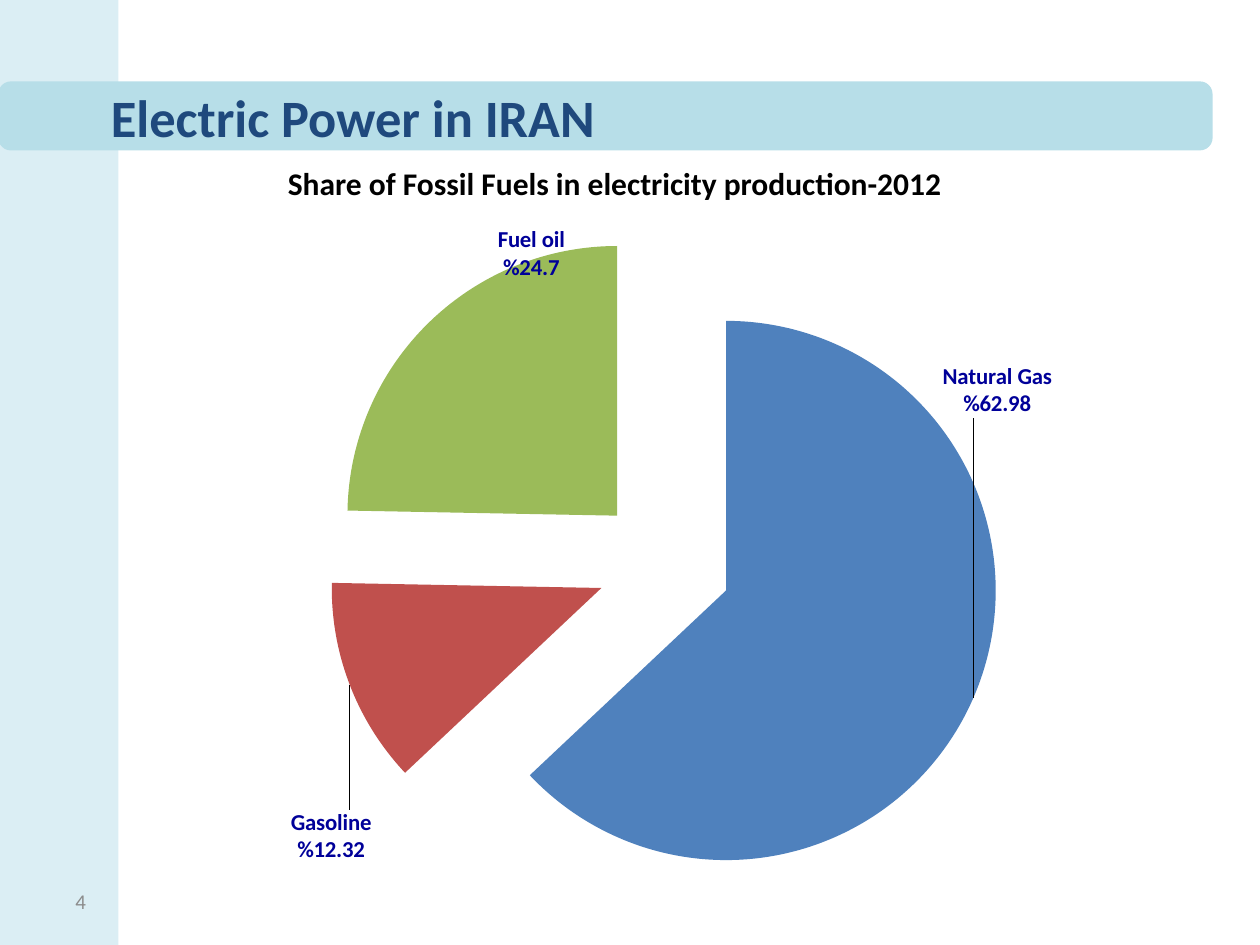
from lxml import etree
from pptx import Presentation
from pptx.chart.data import CategoryChartData
from pptx.dml.color import RGBColor
from pptx.enum.chart import XL_CHART_TYPE, XL_LABEL_POSITION
from pptx.enum.shapes import MSO_SHAPE
from pptx.enum.text import MSO_ANCHOR, PP_ALIGN
from pptx.oxml.ns import qn
from pptx.util import Inches, Pt

PIE = XL_CHART_TYPE.PIE
OUTSIDE = XL_LABEL_POSITION.OUTSIDE_END
LEFT, CENTER = PP_ALIGN.LEFT, PP_ALIGN.CENTER
MIDDLE, TOP = MSO_ANCHOR.MIDDLE, MSO_ANCHOR.TOP

PALE = RGBColor(0xDB, 0xEE, 0xF4)
AQUA = RGBColor(0xB7, 0xDE, 0xE8)
NAVY = RGBColor(0x1F, 0x49, 0x7D)
BLACK = RGBColor(0, 0, 0)
GREY = RGBColor(0x8C, 0x8C, 0x8C)
LABEL_BLUE = RGBColor(0, 0, 0x99)
BLUE = RGBColor(0x4F, 0x81, 0xBD)
RED = RGBColor(0xC0, 0x50, 0x4D)
GREEN = RGBColor(0x9B, 0xBB, 0x59)

FONT = "Calibri"
TITLE = "Electric Power in IRAN"
SUBTITLE = "Share of Fossil Fuels in electricity production-2012"
PAGE_NUMBER = "4"
FUELS = [
    ("Natural Gas", 62.98, BLUE, ["Natural Gas %62.98"], (-0.04, -0.5)),
    ("Gasoline", 12.32, RED, ["Gasoline %12.32"], (0.03, 0.18)),
    ("Oil", 24.7, GREEN, ["Fuel oil", "%24.7"], (0.15, -0.07)),
]
EXPLOSION = 25


def set_font(font, size, color, bold=False):
    font.name = FONT
    font.size = Pt(size)
    font.bold = bold
    font.color.rgb = color


def add_panel(page, shape_type, area, color):
    panel = page.shapes.add_shape(shape_type, *map(Inches, area))
    panel.shadow.inherit = False
    panel.fill.solid()
    panel.fill.fore_color.rgb = color
    panel.line.fill.background()
    return panel


def write(box, text, size, color, bold, align, anchor):
    frame = box.text_frame
    frame.word_wrap = True
    frame.vertical_anchor = anchor
    para = frame.paragraphs[0]
    para.alignment = align
    span = para.add_run()
    span.text = text
    set_font(span.font, size, color, bold)


def manual_layout(**values):
    layout = etree.Element(qn("c:layout"))
    manual = etree.SubElement(layout, qn("c:manualLayout"))
    for name, value in values.items():
        etree.SubElement(manual, qn("c:" + name)).set("val", str(value))
    return layout


def add_pie(page, area):
    data = CategoryChartData()
    data.categories = [fuel[0] for fuel in FUELS]
    data.add_series("Series 1", [fuel[1] for fuel in FUELS])
    chart = page.shapes.add_chart(PIE, *map(Inches, area), data).chart
    chart.has_legend = False
    chart.has_title = False
    set_font(chart.font, 18, BLACK)

    plot_area = chart.plots[0]._element.getparent()
    for old in plot_area.findall(qn("c:layout")):
        plot_area.remove(old)
    plot_area.insert(0, manual_layout(
        layoutTarget="inner", xMode="edge", yMode="edge",
        x=0.03, y=0, w=0.97, h=1))

    series = chart.plots[0].series[0]
    explosion = etree.Element(qn("c:explosion"))
    explosion.set("val", str(EXPLOSION))
    series._element.find(qn("c:tx")).addnext(explosion)
    labels = series.data_labels
    labels.show_value = True
    labels.show_category_name = True
    labels.position = OUTSIDE
    set_font(labels.font, 13, LABEL_BLUE, True)

    for index, (_, _, color, lines, shift) in enumerate(FUELS):
        point = series.points[index]
        point.format.fill.solid()
        point.format.fill.fore_color.rgb = color
        label = point.data_label
        frame = label.text_frame
        for row, line in enumerate(lines):
            para = frame.add_paragraph() if row else frame.paragraphs[0]
            span = para.add_run()
            span.text = line
            set_font(span.font, 13, LABEL_BLUE, True)
        label.position = OUTSIDE
        node = labels._element.findall(qn("c:dLbl"))[index]
        node.find(qn("c:idx")).addnext(manual_layout(x=shift[0], y=shift[1]))


def main():
    deck = Presentation()
    deck.slide_width, deck.slide_height = Inches(10), Inches(7.5)
    page = deck.slides.add_slide(deck.slide_layouts[5])
    title = page.shapes.title

    add_panel(page, MSO_SHAPE.RECTANGLE, (0, 0, 0.94, 7.5), PALE)
    band = add_panel(page, MSO_SHAPE.ROUNDED_RECTANGLE, (0, 0.66, 9.61, 0.52), AQUA)
    band.line.color.rgb = AQUA
    band.line.width = Pt(2)

    page.shapes._spTree.append(title._element)
    title.left, title.top, title.width, title.height = map(Inches, (0.78, 0.3, 8.72, 1.25))
    write(title, TITLE, 30, NAVY, True, LEFT, MIDDLE)

    add_pie(page, (1.41, 1.8, 7.5, 5.35))
    subtitle = page.shapes.add_textbox(*map(Inches, (1.87, 1.25, 6.02, 0.4)))
    write(subtitle, SUBTITLE, 18, BLACK, True, CENTER, TOP)
    number = page.shapes.add_textbox(*map(Inches, (0.5, 6.95, 2.33, 0.4)))
    write(number, PAGE_NUMBER, 12, GREY, False, LEFT, MIDDLE)

    deck.save("out.pptx")


if __name__ == "__main__":
    main()
